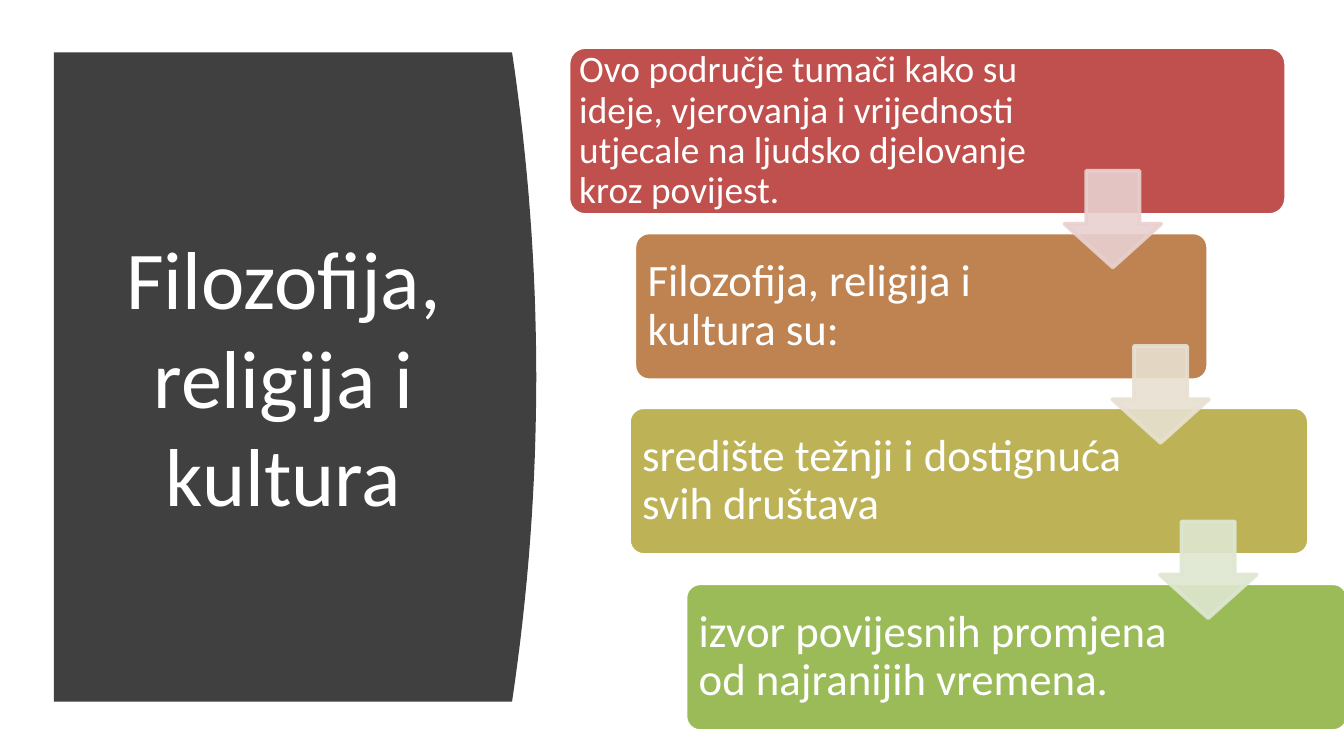
"""Builds the slide on philosophy, religion and culture as a stepped flow."""
import pptx
import pptx.util
import pptx.dml.color
import pptx.enum.shapes
import pptx.enum.text
import pptx.oxml
import pptx.oxml.ns

Inches = pptx.util.Inches
Shape = pptx.enum.shapes.MSO_SHAPE
Align = pptx.enum.text.PP_ALIGN
Anchor = pptx.enum.text.MSO_ANCHOR

THEME = {"font": "Calibri", "text": "FFFFFF", "edge": "FFFFFF", "panel": "404040",
         "title": 44, "large": 24, "small": 20, "line": 2}
TITLE = "Filozofija, religija i kultura"
STEPS = [
    {"text": "Ovo područje tumači kako su ideje, vjerovanja i vrijednosti utjecale "
             "na ljudsko djelovanje kroz povijest.",
     "at": (4.23, 0.35, 5.34, 1.25), "wide": 3.82, "pad": 0.08, "size": "small", "fill": "C0504D"},
    {"text": "Filozofija, religija i kultura su:",
     "at": (4.72, 1.73, 4.27, 1.1), "wide": 3.2, "pad": 0.1, "size": "large", "fill": "BE8351"},
    {"text": "središte težnji i dostignuća svih društava",
     "at": (4.68, 3.03, 5.06, 1.1), "wide": 3.79, "pad": 0.1, "size": "large", "fill": "BDB255"},
    {"text": "izvor povijesnih promjena od najranijih vremena.",
     "at": (5.1, 4.34, 4.93, 1.1), "wide": 3.69, "pad": 0.1, "size": "large", "fill": "9BBB59"},
]
ARROWS = ["E8D0D0", "E8E1D1", "DEE7D1"]
ARROW = {"first": (7.92, 1.27), "last": (8.63, 3.88), "side": 0.72, "alpha": 90}
PANEL = {"left": 0.4, "top": 0.39, "side": 3.81, "bulge": 0.18, "tall": 4.83, "parts": 32}


def color(code):
    return pptx.dml.color.RGBColor.from_string(code)


def paint(shape, fill, edge=None):
    shape.shadow.inherit = False
    shape.fill.solid()
    shape.fill.fore_color.rgb = color(fill)
    if edge:
        shape.line.color.rgb = color(edge)
        shape.line.width = pptx.util.Pt(THEME["line"])
    else:
        shape.line.fill.background()


def fade(shape, alpha):
    for node in shape._element.spPr.iter(pptx.oxml.ns.qn("a:srgbClr")):
        part = pptx.oxml.parse_xml(
            f'<a:alpha {pptx.oxml.ns.nsdecls("a")} val="{alpha * 1000}"/>')
        node.append(part)


def write(shape, text, size, align, space=None):
    frame = shape.text_frame
    frame.word_wrap = True
    frame.auto_size = pptx.enum.text.MSO_AUTO_SIZE.NONE
    frame.vertical_anchor = Anchor.MIDDLE
    para = frame.paragraphs[0]
    para.alignment = align
    if space:
        para.line_spacing = space
    run = para.add_run()
    run.text = text
    run.font.name = THEME["font"]
    run.font.size = pptx.util.Pt(THEME[size])
    run.font.color.rgb = color(THEME["text"])
    return frame


def add_panel(slide):
    left, top, side = PANEL["left"], PANEL["top"], PANEL["side"]
    tall, parts = PANEL["tall"], PANEL["parts"]
    edge = []
    for i in range(parts + 1):
        t = 2 * i / parts - 1
        edge.append((side + PANEL["bulge"] * (1 - t * t), top + tall * i / parts))
    edge.append((left, top + tall))
    build = slide.shapes.build_freeform(Inches(left), Inches(top))
    build.add_line_segments([(Inches(x), Inches(y)) for x, y in edge], close=True)
    panel = build.convert_to_shape()
    paint(panel, THEME["panel"])
    slide.shapes._spTree.insert(2, panel._element)


def add_title(slide):
    title = slide.shapes.title
    title.left, title.top = Inches(0.71), Inches(0.83)
    title.width, title.height = Inches(2.8), Inches(3.93)
    write(title, TITLE, "title", Align.CENTER)


def add_step(slide, step):
    left, top, width, height = map(Inches, step["at"])
    card = slide.shapes.add_shape(Shape.ROUNDED_RECTANGLE, left, top, width, height)
    card.adjustments[0] = 0.1
    paint(card, step["fill"], THEME["edge"])
    label = slide.shapes.add_textbox(left, top, Inches(step["wide"]), height)
    frame = write(label, step["text"], step["size"], Align.LEFT, 0.9)
    pad = Inches(step["pad"])
    frame.margin_left = frame.margin_right = pad
    frame.margin_top = frame.margin_bottom = pad


def add_arrow(slide, i, fill):
    left, top = (a + (b - a) * i / (len(ARROWS) - 1)
                 for a, b in zip(ARROW["first"], ARROW["last"]))
    side = Inches(ARROW["side"])
    arrow = slide.shapes.add_shape(Shape.DOWN_ARROW, Inches(left), Inches(top), side, side)
    arrow.adjustments[0], arrow.adjustments[1] = 0.55, 0.45
    paint(arrow, fill, fill)
    fade(arrow, ARROW["alpha"])


def main():
    deck = pptx.Presentation()
    deck.slide_width = Inches(10)
    deck.slide_height = deck.slide_width * 9 // 16
    slide = deck.slides.add_slide(deck.slide_layouts[5])
    add_panel(slide)
    add_title(slide)
    for step in STEPS:
        add_step(slide, step)
    for i, fill in enumerate(ARROWS):
        add_arrow(slide, i, fill)
    deck.save("out.pptx")


if __name__ == "__main__":
    main()
